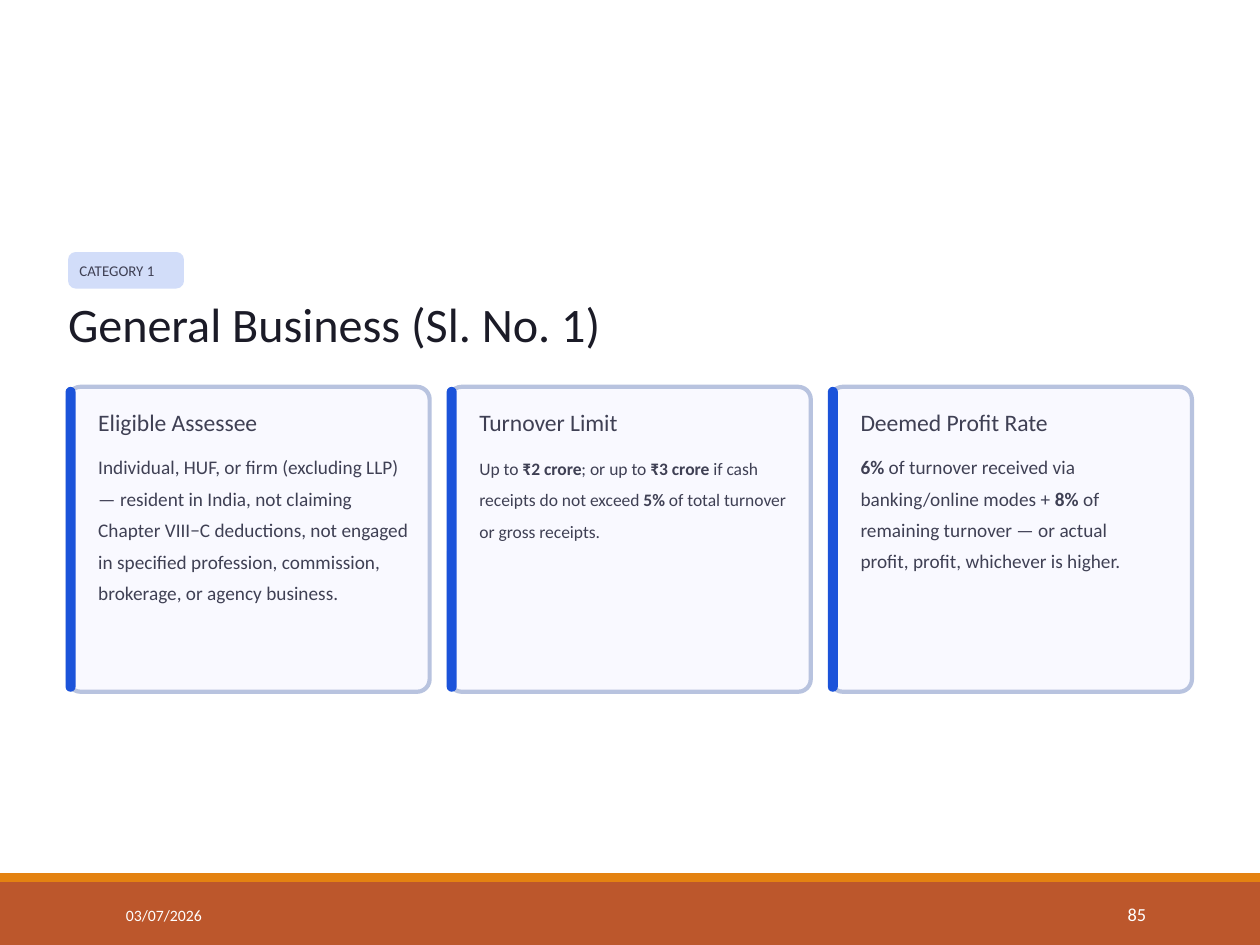
from pptx import Presentation
from pptx.dml.color import RGBColor
from pptx.enum.shapes import MSO_SHAPE
from pptx.enum.text import MSO_ANCHOR, MSO_AUTO_SIZE, PP_ALIGN
from pptx.util import Inches, Pt

RECTANGLE = MSO_SHAPE.RECTANGLE
ROUNDED = MSO_SHAPE.ROUNDED_RECTANGLE
TOP = MSO_ANCHOR.TOP
NO_AUTOFIT = MSO_AUTO_SIZE.NONE
LEFT = PP_ALIGN.LEFT

FONT = "Calibri"
COLORS = {
    "footer": "BC572C",
    "footer_edge": "E48211",
    "tag": "D2DDF9",
    "card": "F9F9FF",
    "card_border": "B8C3DF",
    "accent": "1B53DA",
    "title": "1B1B27",
    "text": "3F4054",
    "white": "FFFFFF",
}

CARDS = [
    ("Eligible Assessee", 11, 1.36, 1.28, 2.5, [
        ("Individual, HUF, or firm (excluding LLP) — resident in India, "
         "not claiming Chapter VIII−C deductions, not engaged in specified "
         "profession, commission, brokerage, or agency business.", False),
    ]),
    ("Turnover Limit", 10, 1.5, 0.78, 2.5, [
        ("Up to ", False), ("₹2 crore", True), ("; or up to ", False),
        ("₹3 crore ", True), ("if cash receipts do not exceed ", False),
        ("5% ", True), ("of total turnover or gross receipts.", False),
    ]),
    ("Deemed Profit Rate", 11, 1.36, 1.03, 2.3, [
        ("6% ", True),
        ("of turnover received via banking/online modes + ", False),
        ("8% ", True),
        ("of remaining turnover — or actual profit, profit, "
         "whichever is higher.", False),
    ]),
]


def rgb(name):
    return RGBColor.from_string(COLORS[name])


def add_panel(slide, kind, left, top, width, height, fill, radius=0, border=None):
    panel = slide.shapes.add_shape(
        kind, Inches(left), Inches(top), Inches(width), Inches(height))
    panel.shadow.inherit = False
    panel.fill.solid()
    panel.fill.fore_color.rgb = rgb(fill)
    if radius:
        panel.adjustments[0] = radius / min(width, height)
    if border:
        panel.line.color.rgb = rgb(border)
        panel.line.width = Pt(2.4)
    else:
        panel.line.fill.background()


def format_text(holder, runs, size, color, inset=0.02, spacing=None):
    frame = holder.text_frame
    frame.word_wrap = True
    frame.auto_size = NO_AUTOFIT
    frame.vertical_anchor = TOP
    frame.margin_left = frame.margin_right = frame.margin_bottom = 0
    frame.margin_top = Inches(inset)
    paragraph = frame.paragraphs[0]
    paragraph.alignment = LEFT
    paragraph.space_before = Pt(0)
    if spacing:
        paragraph.line_spacing = spacing
    paragraph.font.name = FONT
    paragraph.font.size = Pt(size)
    paragraph.font.color.rgb = rgb(color)
    for words, bold in runs:
        run = paragraph.add_run()
        run.text = words
        if bold:
            run.font.bold = True


def add_text(slide, left, top, width, height, runs, size, color, **options):
    label = slide.shapes.add_textbox(
        Inches(left), Inches(top), Inches(width), Inches(height))
    format_text(label, runs, size, color, **options)


def add_footer(slide, left, top, width, height):
    edge = 0.07
    add_panel(slide, RECTANGLE, left, top + edge, width, height - edge, "footer")
    add_panel(slide, RECTANGLE, left, top, width, edge, "footer_edge")
    add_text(slide, left + 1, top + 0.26, 0.7, 0.16,
             [("03/07/2026", False)], 9, "white", inset=0)
    add_text(slide, left + 8.95, top + 0.24, 0.3, 0.18,
             [("85", False)], 10.5, "white", inset=0)


def add_heading(slide, left, top, width):
    add_panel(slide, ROUNDED, left, top, 0.92, 0.29, "tag", radius=0.06)
    add_text(slide, left + 0.09, top + 0.06, 0.75, 0.17,
             [("CATEGORY 1", False)], 8.5, "text")
    title = slide.shapes.title
    title.left, title.top = Inches(left), Inches(top + 0.32)
    title.width, title.height = Inches(width), Inches(0.49)
    format_text(title, [("General Business (Sl. No. 1)", False)], 27.5, "title")


def add_card(slide, left, top, width, height, card):
    heading, size, spacing, body_height, body_width, body = card
    add_panel(slide, ROUNDED, left, top, width, height, "card",
              radius=0.1, border="card_border")
    add_panel(slide, ROUNDED, left - 0.02, top, 0.08, height, "accent", radius=0.04)
    text_left = left + 0.24
    add_text(slide, text_left, top + 0.15, 2, 0.26, [(heading, False)], 13.5, "text")
    add_text(slide, text_left, top + 0.47, body_width, body_height, body,
             size, "text", inset=0.01, spacing=spacing)


def add_cards(slide, left, top, width, height):
    gap = 0.155
    card_width = (width - gap * (len(CARDS) - 1)) / len(CARDS)
    for index, card in enumerate(CARDS):
        add_card(slide, left + index * (card_width + gap), top,
                 card_width, height, card)


def main():
    presentation = Presentation()
    presentation.slide_width = Inches(10)
    presentation.slide_height = Inches(7.5)
    slide = presentation.slides.add_slide(presentation.slide_layouts[5])
    add_footer(slide, 0, 6.93, 10, 0.57)
    add_heading(slide, 0.54, 2, 4.6)
    add_cards(slide, 0.54, 3.07, 8.92, 2.42)
    presentation.save("out.pptx")


if __name__ == "__main__":
    main()
